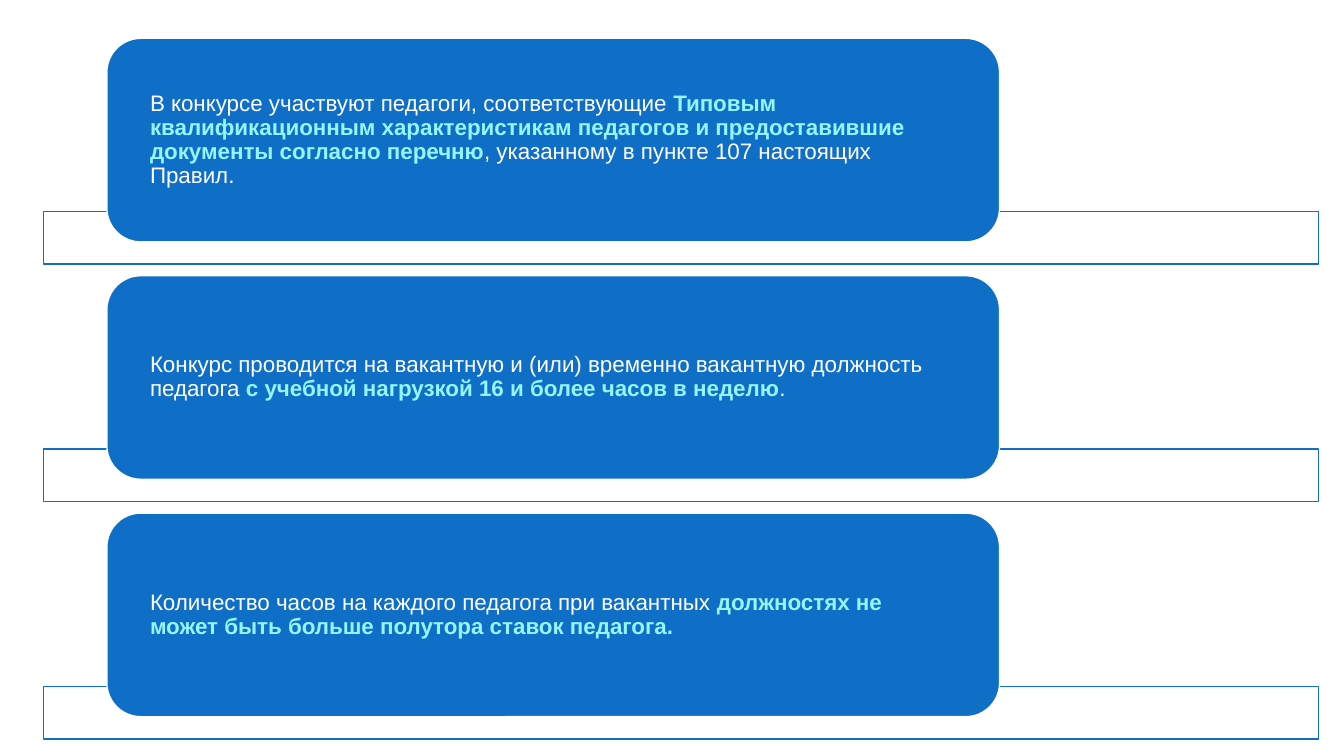
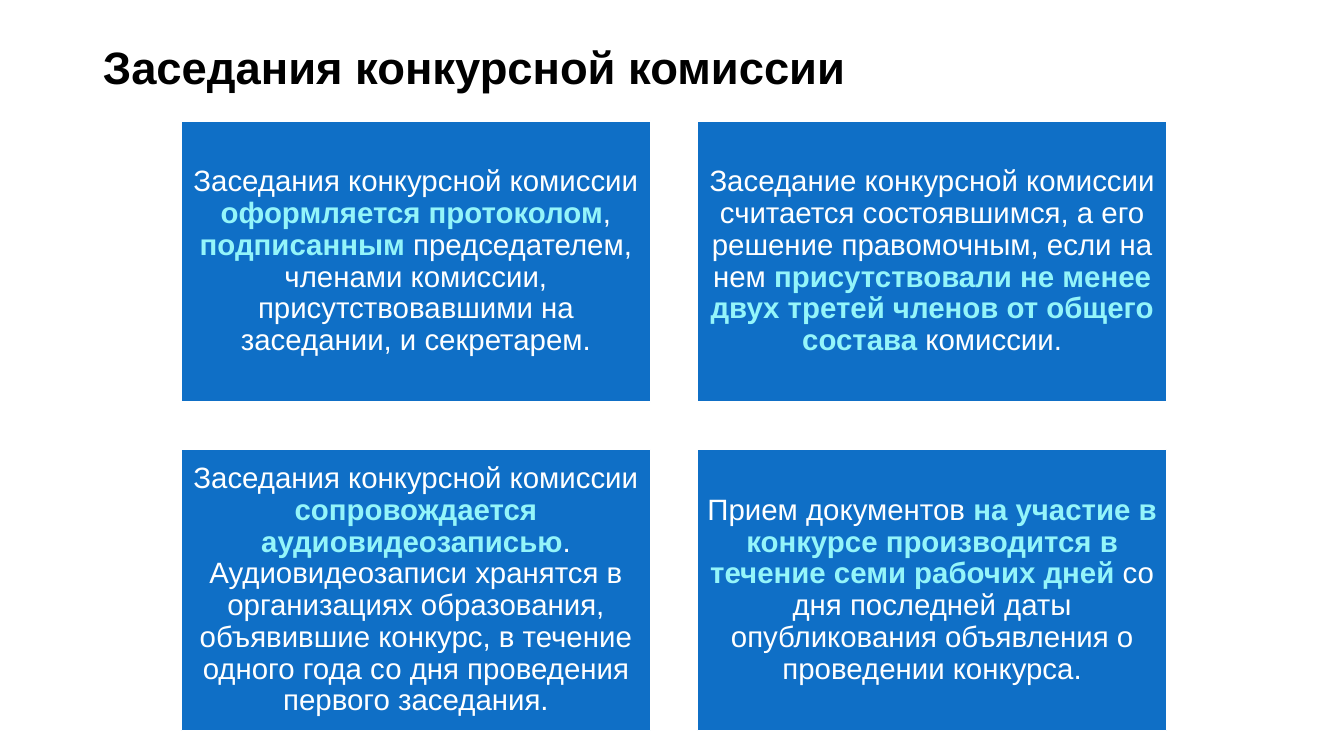
from pptx import Presentation
from pptx.dml.color import RGBColor
from pptx.enum.shapes import MSO_SHAPE as Shape
from pptx.enum.text import MSO_ANCHOR as Anchor, MSO_AUTO_SIZE as Fit, PP_ALIGN as Align
from pptx.oxml.ns import qn
from pptx.util import Inches, Pt
from lxml.etree import SubElement

BLUE, AQUA, WHITE, BLACK = "0F6FC6", "94F5FA", "FFFFFF", "000000"
FONT = "Arial"

RULES = [
    "В конкурсе участвуют педагоги, соответствующие *Типовым квалификационным "
    "характеристикам педагогов и предоставившие документы согласно перечню*, "
    "указанному в пункте 107 настоящих Правил.",
    "Конкурс проводится на вакантную и (или) временно вакантную должность педагога "
    "*с учебной нагрузкой 16 и более часов в неделю*.",
    "Количество часов на каждого педагога при вакантных *должностях не может быть "
    "больше полутора ставок педагога.*",
]
NOTES = [
    "Заседания конкурсной комиссии *оформляется протоколом*, *подписанным* "
    "председателем, членами комиссии, присутствовавшими на заседании, и секретарем.",
    "Заседание конкурсной комиссии считается состоявшимся, а его решение "
    "правомочным, если на нем *присутствовали не менее двух третей членов от общего "
    "состава* комиссии.",
    "Заседания конкурсной комиссии *сопровождается аудиовидеозаписью*. "
    "Аудиовидеозаписи хранятся в организациях образования, объявившие конкурс, "
    "в течение одного года со дня проведения первого заседания.",
    "Прием документов *на участие в конкурсе производится в течение семи рабочих "
    "дней *со дня последней даты опубликования объявления о проведении конкурса.",
]


def color(code):
    return RGBColor.from_string(code)


def write(shape, text, size, ink=WHITE, bold=False, align=Align.LEFT, pad=(0.1, 0.05)):
    frame = shape.text_frame
    frame.word_wrap = True
    frame.auto_size = Fit.NONE
    frame.vertical_anchor = Anchor.MIDDLE
    frame.margin_left = frame.margin_right = Inches(pad[0])
    frame.margin_top = frame.margin_bottom = Inches(pad[1])
    para = frame.paragraphs[0]
    para.alignment = align
    para.line_spacing = 0.9
    for i, part in enumerate(text.split("*")):
        if part:
            run = para.add_run()
            run.text = part
            font = run.font
            font.name, font.size = FONT, Pt(size)
            font.bold = bold or i % 2 == 1
            font.color.rgb = color(AQUA if i % 2 else ink)


def panel(slide, kind, box, fill=BLUE, line=WHITE, alpha=None):
    shape = slide.shapes.add_shape(kind, *map(Inches, box))
    shape.shadow.inherit = False
    shape.fill.solid()
    shape.fill.fore_color.rgb = color(fill)
    shape.line.color.rgb = color(line)
    shape.line.width = Pt(1)
    if alpha:
        tint = shape.fill._xPr.find(qn("a:solidFill"))[0]
        SubElement(tint, qn("a:alpha")).set("val", str(alpha * 1000))
    return shape


def rule(slide, text, box):
    left, top, width, height = box
    panel(slide, Shape.RECTANGLE, (left, top + 1.72, width, 0.52), WHITE, BLUE, 90)
    card = panel(slide, Shape.ROUNDED_RECTANGLE,
                 (left + 0.63, top, width * 0.7, height))
    write(card, text, 16, pad=(0.33, 0))


def rules(deck):
    slide = deck.slides.add_slide(deck.slide_layouts[6])
    for row, text in enumerate(RULES):
        rule(slide, text, (0.43, 0.38 + row * 2.355, 12.65, 2.02))


def grid(slide, texts, box, gap=0.47):
    left, top, width, height = box
    wide, high = (width - gap) / 2, (height - gap) / 2
    for i, text in enumerate(texts):
        row, col = divmod(i, 2)
        card = panel(slide, Shape.RECTANGLE,
                     (left + col * (wide + gap), top + row * (high + gap), wide, high))
        write(card, text, 21, align=Align.CENTER, pad=(0.09, 0.09))


def meetings(deck):
    slide = deck.slides.add_slide(deck.slide_layouts[5])
    title = slide.shapes.title
    title.left, title.top, title.width, title.height = map(Inches, (0.92, 0.4, 11.5, 0.59))
    write(title, "Заседания конкурсной комиссии", 32.4, ink=BLACK, bold=True)
    grid(slide, NOTES, (1.8, 1.2, 9.77, 6.05))


def main():
    deck = Presentation()
    deck.slide_width, deck.slide_height = Inches(13.33), Inches(7.5)
    rules(deck)
    meetings(deck)
    deck.save("out.pptx")


if __name__ == "__main__":
    main()
